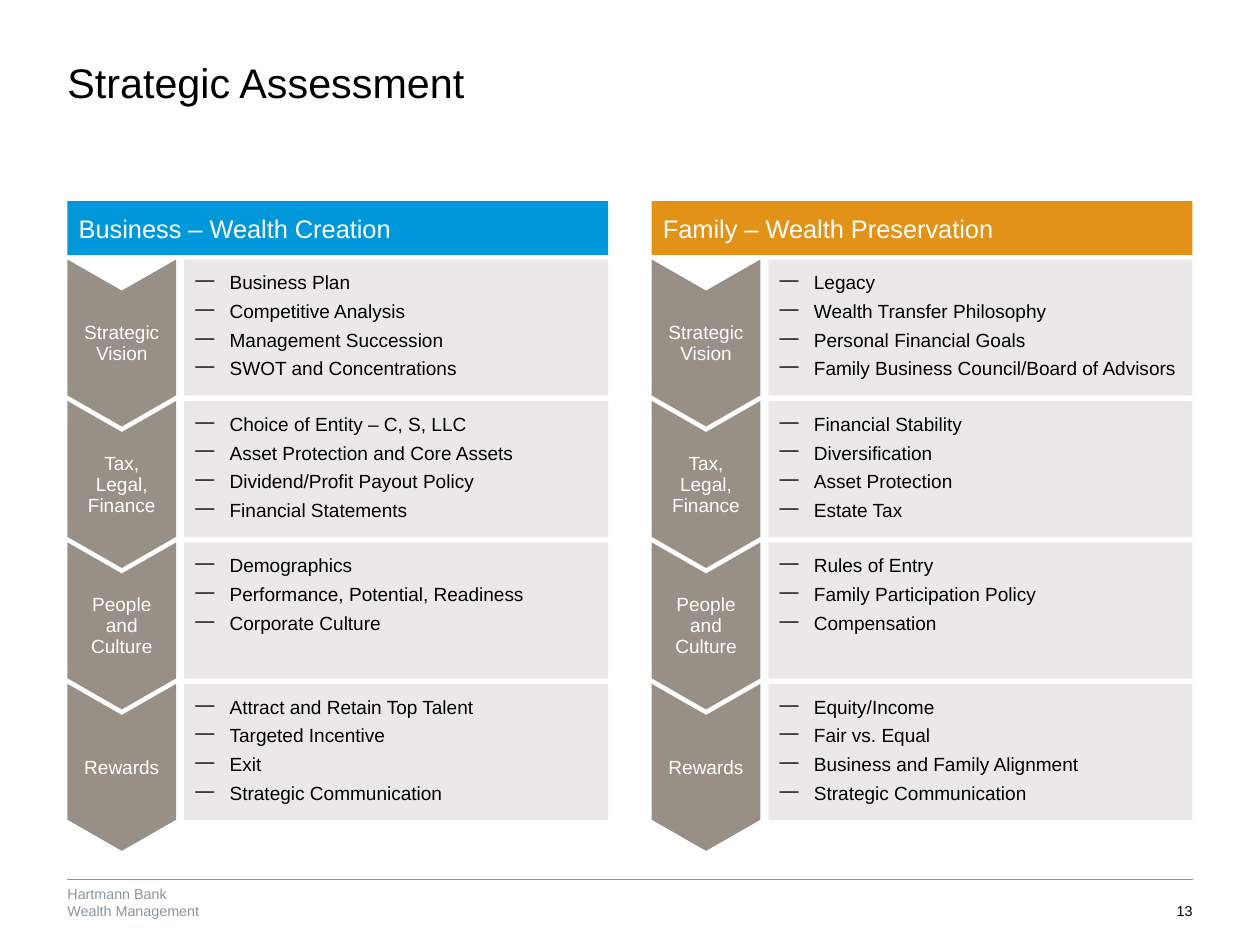
import pptx
import pptx.dml.color
import pptx.enum.shapes
import pptx.enum.text
import pptx.oxml.ns
import pptx.util
from lxml import etree

Inches = pptx.util.Inches
Pt = pptx.util.Pt
RGBColor = pptx.dml.color.RGBColor
Shape = pptx.enum.shapes.MSO_SHAPE
Anchor = pptx.enum.text.MSO_ANCHOR
Align = pptx.enum.text.PP_ALIGN
qn = pptx.oxml.ns.qn

BLACK = RGBColor(0x00, 0x00, 0x00)
WHITE = RGBColor(0xFF, 0xFF, 0xFF)
BLUE = RGBColor(0x00, 0x98, 0xDB)
ORANGE = RGBColor(0xE2, 0x93, 0x17)
TAUPE = RGBColor(0x98, 0x8F, 0x86)
PALE = RGBColor(0xEA, 0xE9, 0xE7)
SLATE = RGBColor(0x89, 0x96, 0xA0)

LEFT, RIGHT = 0.59, 10.43
COLUMN_WIDTH = 4.73
HEADER_TOP, HEADER_HEIGHT = 1.76, 0.47
ROW_TOP, ROW_PITCH = 2.27, 1.237
PANEL_OFFSET, PANEL_WIDTH, PANEL_HEIGHT = 1.02, 3.71, 1.19
ARROW_WIDTH, ARROW_LENGTH, ARROW_POINT = 0.95, 1.46, 0.286
LABEL_HEIGHT = 0.75
FOOTER_TOP, FOOTER_HEIGHT = 7.7, 0.34

STAGES = ["Strategic Vision", "Tax, Legal, Finance", "People and Culture", "Rewards"]
BUSINESS = [
    ["Business Plan", "Competitive Analysis", "Management Succession",
     "SWOT and Concentrations"],
    ["Choice of Entity – C, S, LLC", "Asset Protection and Core Assets",
     "Dividend/Profit Payout Policy", "Financial Statements"],
    ["Demographics", "Performance, Potential, Readiness", "Corporate Culture"],
    ["Attract and Retain Top Talent", "Targeted Incentive", "Exit",
     "Strategic Communication"],
]
FAMILY = [
    ["Legacy", "Wealth Transfer Philosophy", "Personal Financial Goals",
     "Family Business Council/Board of Advisors"],
    ["Financial Stability", "Diversification", "Asset Protection", "Estate Tax"],
    ["Rules of Entry", "Family Participation Policy", "Compensation"],
    ["Equity/Income", "Fair vs. Equal", "Business and Family Alignment",
     "Strategic Communication"],
]
COLUMNS = [
    (LEFT, "Business – Wealth Creation", BLUE, BUSINESS),
    (RIGHT - COLUMN_WIDTH, "Family – Wealth Preservation", ORANGE, FAMILY),
]


def write(shape, text, size, color, align=Align.LEFT, anchor=Anchor.TOP,
          margins=(0.1, 0.05, 0.1, 0.05), spacing=None):
    """Fill a shape with text, one paragraph a line, in a single style."""
    frame = shape.text_frame
    frame.text = text
    frame.word_wrap = True
    frame.auto_size = pptx.enum.text.MSO_AUTO_SIZE.NONE
    frame.vertical_anchor = anchor
    (frame.margin_left, frame.margin_top,
     frame.margin_right, frame.margin_bottom) = map(Inches, margins)
    for para in frame.paragraphs:
        para.alignment = align
        if spacing is not None:
            para.line_spacing = spacing
        for span in para.runs:
            span.font.name = "Arial"
            span.font.size = Pt(size)
            span.font.color.rgb = color


def add_text(page, left, top, width, height, text, size, color, **style):
    box = page.shapes.add_textbox(*map(Inches, (left, top, width, height)))
    write(box, text, size, color, **style)


def add_filled(page, kind, left, top, width, height, color):
    shape = page.shapes.add_shape(kind, *map(Inches, (left, top, width, height)))
    shape.shadow.inherit = False
    shape.fill.solid()
    shape.fill.fore_color.rgb = color
    shape.line.fill.background()
    return shape


def add_dash_bullet(para):
    properties = para._p.get_or_add_pPr()
    properties.set("marL", str(Inches(0.3)))
    properties.set("indent", str(-Inches(0.3)))
    etree.SubElement(properties, qn("a:buChar")).set("char", "—")


def add_header(page, left, text, color):
    bar = add_filled(page, Shape.RECTANGLE, left, HEADER_TOP, COLUMN_WIDTH,
                     HEADER_HEIGHT, color)
    write(bar, text, 16, WHITE, anchor=Anchor.MIDDLE)


def add_panel(page, left, top, items):
    panel = add_filled(page, Shape.RECTANGLE, left, top, PANEL_WIDTH,
                       PANEL_HEIGHT, PALE)
    write(panel, "\n".join(items), 12, BLACK, spacing=Pt(18))
    for para in panel.text_frame.paragraphs:
        add_dash_bullet(para)


def add_stage(page, left, top, label):
    """Draw a chevron pointing down, with its upright label on top."""
    turn = (ARROW_LENGTH - ARROW_WIDTH) / 2
    arrow = add_filled(page, Shape.CHEVRON, left - turn, top + turn,
                       ARROW_LENGTH, ARROW_WIDTH, TAUPE)
    arrow.adjustments[0] = ARROW_POINT
    arrow.rotation = 90
    add_text(page, left, top + (ARROW_LENGTH - LABEL_HEIGHT) / 2, ARROW_WIDTH,
             LABEL_HEIGHT, label, 12, WHITE, align=Align.CENTER,
             anchor=Anchor.MIDDLE, spacing=Pt(13.2))


def add_title(page):
    title = page.shapes.title
    title.left, title.top = Inches(LEFT), Inches(0.55)
    title.width, title.height = Inches(9.25), Inches(0.83)
    write(title, "Strategic Assessment", 26, BLACK,
          margins=(0, 0, 0.59, 0), spacing=0.9)


def add_footer(page):
    rule = page.shapes.add_connector(
        pptx.enum.shapes.MSO_CONNECTOR.STRAIGHT,
        *map(Inches, (LEFT, 7.69, RIGHT, 7.69)))
    rule.line.color.rgb = SLATE
    rule.line.width = Pt(0.5)
    etree.SubElement(rule._element.spPr, qn("a:effectLst"))
    margins = (0, 0.04, 0, 0)
    add_text(page, LEFT, FOOTER_TOP, 2, FOOTER_HEIGHT,
             "Hartmann Bank\nWealth Management", 9, SLATE, margins=margins)
    add_text(page, RIGHT - 0.59, FOOTER_TOP, 0.59, FOOTER_HEIGHT, "13", 9, BLACK,
             align=Align.RIGHT, anchor=Anchor.BOTTOM, margins=margins)


def main():
    deck = pptx.Presentation()
    deck.slide_width, deck.slide_height = Inches(11.02), Inches(8.29)
    page = deck.slides.add_slide(deck.slide_layouts.get_by_name("Title Only"))
    add_title(page)
    for left, heading, color, panels in COLUMNS:
        add_header(page, left, heading, color)
        for row, (stage, items) in enumerate(zip(STAGES, panels)):
            top = ROW_TOP + row * ROW_PITCH
            add_panel(page, left + PANEL_OFFSET, top, items)
            add_stage(page, left, top, stage)
    add_footer(page)
    deck.save("out.pptx")


if __name__ == "__main__":
    main()
